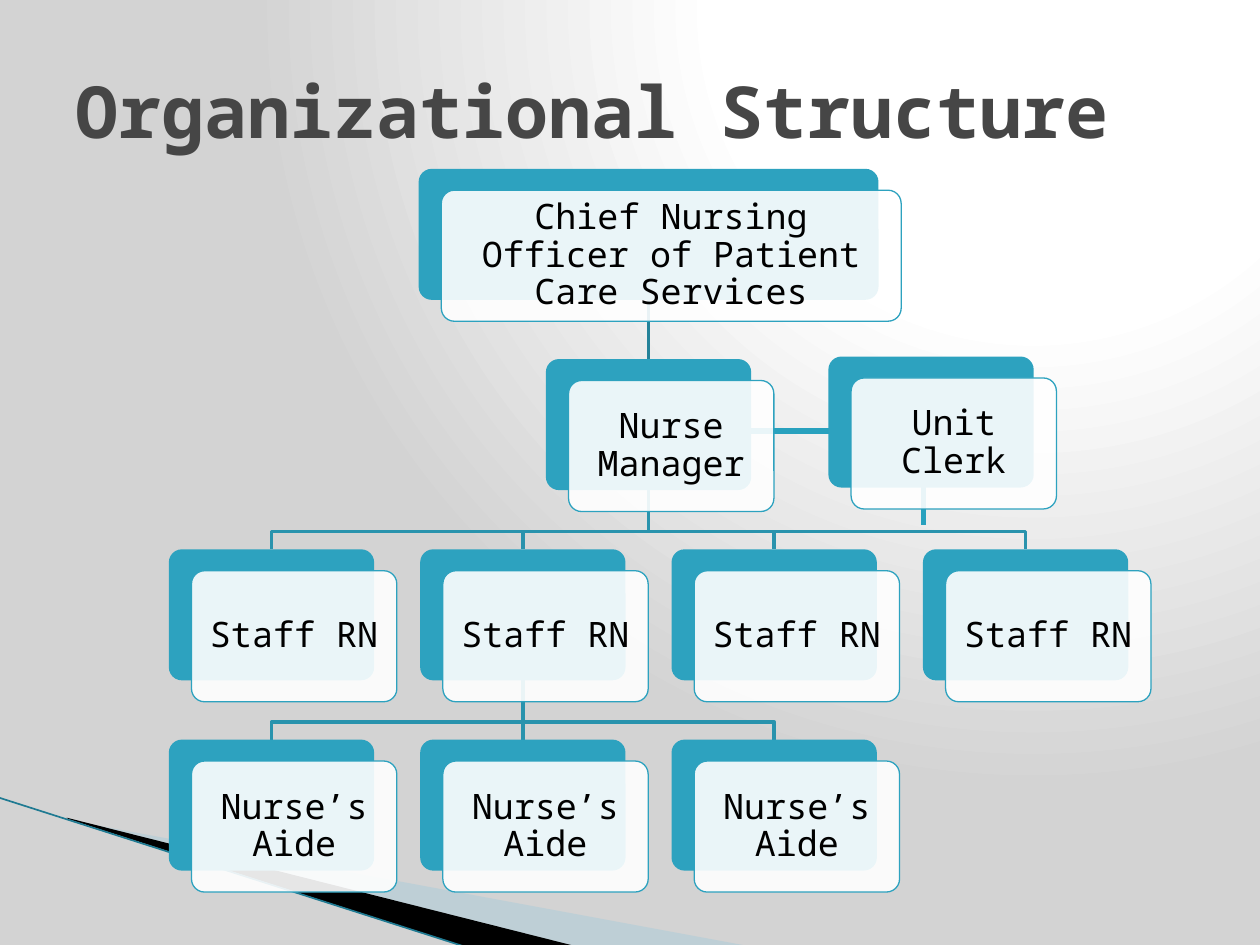
"""Build the nursing organizational structure slide."""
from dataclasses import dataclass

from lxml import etree
from pptx import Presentation
from pptx.dml.color import RGBColor
from pptx.enum.shapes import MSO_CONNECTOR as CONN, MSO_SHAPE as SHAPE
from pptx.enum.text import MSO_ANCHOR as ANCHOR, PP_ALIGN as ALIGN
from pptx.oxml import parse_xml
from pptx.oxml.ns import nsdecls, qn
from pptx.util import Inches, Pt

FONT = "Noto Sans Mono"
TEAL, BRANCH, TRUNK, LINK = "2DA2BF", "2993AD", "248299", "28A1BE"
COL_X, COL_STEP = 2.155, 1.995
ROW_Y, ROW_STEP = 1.34, 1.51
BOX_H, ELBOW_Y = 1.04, 0.33
CARD_DX, CARD_DY = 0.18, 0.17
BACKGROUND = f"""<p:bg {nsdecls('p', 'a')}><p:bgPr><a:gradFill rotWithShape="1"><a:gsLst>
<a:gs pos="0"><a:srgbClr val="FFFFFF"/></a:gs><a:gs pos="40000"><a:srgbClr val="FFFFFF"/></a:gs>
<a:gs pos="100000"><a:srgbClr val="D3D3D3"/></a:gs></a:gsLst>
<a:path path="circle"><a:fillToRect l="65000" b="98000"/></a:path></a:gradFill>
<a:effectLst/></p:bgPr></p:bg>"""


@dataclass
class Node:
    """A position in the chart, placed by its centre and top."""
    text: str
    x: float
    top: float
    width: float = 1.63

    @property
    def bottom(self) -> float:
        """Return the lower edge of the box."""
        return self.top + BOX_H


def grid_node(text: str, col: float, row: int, width: float = 1.63) -> Node:
    """Place a node on the chart grid."""
    return Node(text, COL_X + col * COL_STEP, ROW_Y + row * ROW_STEP, width)


def rgb(value: str) -> RGBColor:
    """Turn a hex string into a colour."""
    return RGBColor.from_string(value)


def set_fill(sp, color: str, alpha: int = 100) -> None:
    """Fill a shape with a colour at a given opacity."""
    sp.fill.solid()
    sp.fill.fore_color.rgb = rgb(color)
    if alpha < 100:
        clr = sp.fill._xPr.find(qn("a:solidFill"))[0]
        etree.SubElement(clr, qn("a:alpha")).set("val", str(alpha * 1000))


def set_line(sp, color: str, width: float) -> None:
    """Set line colour and width."""
    sp.line.color.rgb = rgb(color)
    sp.line.width = Pt(width)


def add_line(shapes, start: tuple, end: tuple, color: str, width: float) -> None:
    """Draw a straight connector without a shadow."""
    cn = shapes.add_connector(CONN.STRAIGHT, *(Inches(v) for v in start + end))
    set_line(cn, color, width)
    etree.SubElement(cn._element.spPr, qn("a:effectLst"))


def add_path(shapes, points: list, close: bool):
    """Draw a freeform through points given in inches."""
    pts = [(Inches(x), Inches(y)) for x, y in points]
    builder = shapes.build_freeform(*pts[0])
    builder.add_line_segments(pts[1:], close=close)
    sp = builder.convert_to_shape()
    sp.shadow.inherit = False
    return sp


def add_swoosh(shapes, points: list, color: str, alpha: int = 100) -> None:
    """Draw a filled corner wedge."""
    sp = add_path(shapes, points, True)
    set_fill(sp, color, alpha)
    sp.line.fill.background()


def add_branch(shapes, parent: Node, child: Node, color: str = BRANCH) -> None:
    """Join a parent to a child, with an elbow where they are not aligned."""
    start, end = (parent.x, parent.bottom), (child.x, child.top)
    if abs(parent.x - child.x) < 0.01:
        add_line(shapes, start, end, color, 2)
        return
    bend = parent.bottom + ELBOW_Y
    sp = add_path(shapes, [start, (parent.x, bend), (child.x, bend), end], False)
    sp.fill.background()
    set_line(sp, color, 2)


def add_box(shapes, x: float, y: float, width: float):
    """Draw one rounded box."""
    sp = shapes.add_shape(SHAPE.ROUNDED_RECTANGLE, Inches(x), Inches(y), Inches(width), Inches(BOX_H))
    sp.adjustments[0] = 0.1
    sp.shadow.inherit = False
    return sp


def style_text(sp, text: str, size: float, color: str, bold: bool = False):
    """Write one paragraph in a shape and return it."""
    tf = sp.text_frame
    tf.word_wrap = True
    tf.vertical_anchor = ANCHOR.MIDDLE
    tf.text = text
    p = tf.paragraphs[0]
    font = p.runs[0].font
    font.name, font.size, font.bold = FONT, Pt(size), bold
    font.color.rgb = rgb(color)
    return p


def add_node(shapes, node: Node) -> None:
    """Draw a teal box with its translucent label card."""
    left = node.x - node.width / 2
    back = add_box(shapes, left, node.top, node.width)
    set_fill(back, TEAL)
    back.line.fill.background()
    card = add_box(shapes, left + CARD_DX, node.top + CARD_DY, node.width)
    set_fill(card, "FFFFFF", 90)
    set_line(card, TEAL, 0.75)
    p = style_text(card, node.text, 20, "000000")
    p.alignment, p.line_spacing, p.space_after = ALIGN.CENTER, 0.9, Pt(7)
    tf = card.text_frame
    tf.margin_left = tf.margin_right = tf.margin_top = tf.margin_bottom = Inches(0.08)


def main() -> None:
    """Build and save the slide."""
    prs = Presentation()
    prs.slide_width, prs.slide_height = Inches(10), Inches(7.5)
    s = prs.slides.add_slide(prs.slide_layouts[6])
    s._element.cSld.insert(0, parse_xml(BACKGROUND))
    shapes = s.shapes

    add_swoosh(shapes, [(0.55, 6.51), (5.95, 7.51), (4.56, 7.51), (0.55, 6.5)], "A0CBDC", 40)
    add_swoosh(shapes, [(0.53, 6.49), (4.57, 7.51), (3.72, 7.52), (0.54, 6.5)], "000000")
    add_line(shapes, (-0.01, 6.33), (3.71, 7.52), "1F7A92", 0.95)

    chief = grid_node("Chief Nursing Officer of Patient Care Services", 1.5, 0, 3.65)
    manager = grid_node("Nurse Manager", 1.5, 1)
    clerk = Node("Unit Clerk", 7.39, 2.83)
    staff = [grid_node("Staff RN", col, 2) for col in range(4)]
    aides = [grid_node("Nurse’s Aide", col, 3) for col in range(3)]

    add_line(shapes, (5.92, 3.42), (6.58, 3.42), LINK, 3)
    add_line(shapes, (7.33, 3.83), (7.33, 4.17), LINK, 3)
    add_branch(shapes, chief, manager, TRUNK)
    for parent, children in ((manager, staff), (staff[1], aides)):
        for child in children:
            add_branch(shapes, parent, child)
    for node in [chief, manager, *staff, *aides, clerk]:
        add_node(shapes, node)

    title = shapes.add_textbox(Inches(0.5), Inches(0.25), Inches(9), Inches(1.25))
    style_text(title, "Organizational Structure", 41, "464646", True)
    prs.save("out.pptx")


if __name__ == "__main__":
    main()
